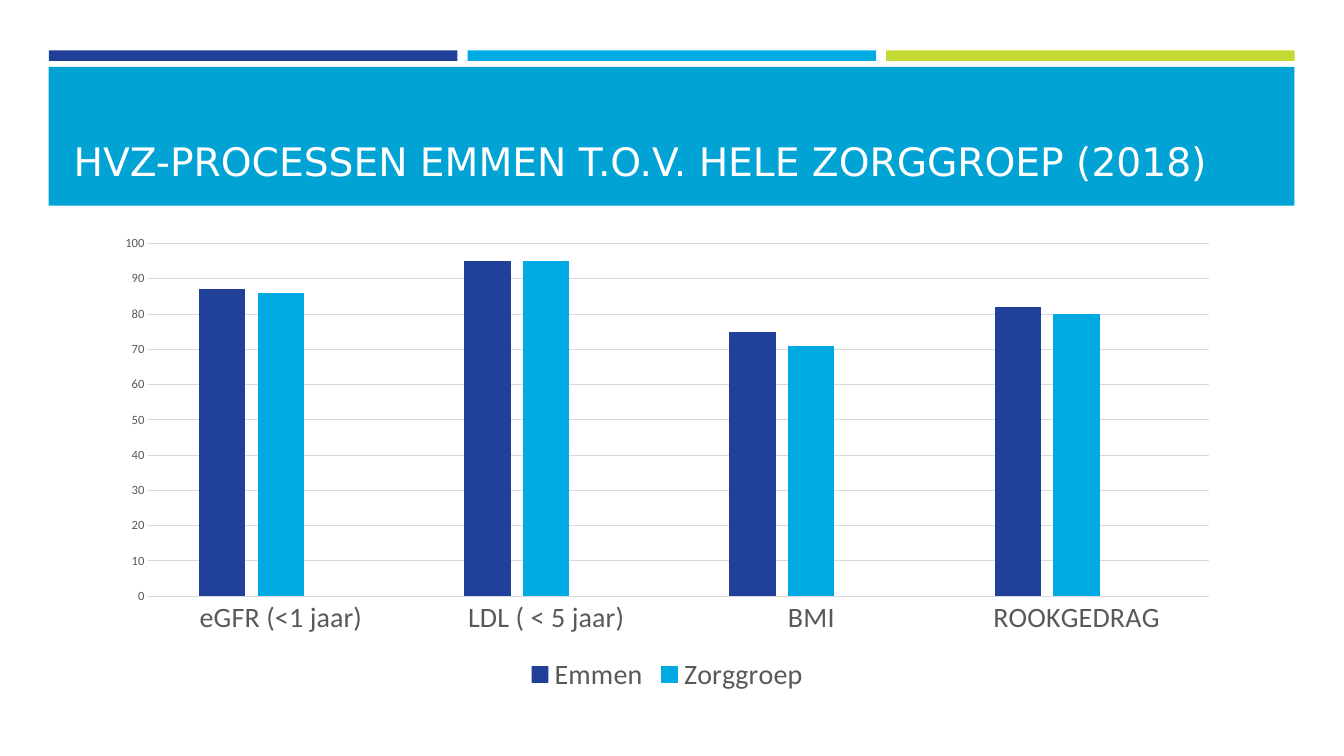
from pptx import Presentation
from pptx.chart.data import CategoryChartData
from pptx.dml.color import RGBColor
from pptx.enum import chart as ch, shapes, text
from pptx.oxml import parse_xml
from pptx.oxml.ns import nsdecls
from pptx.util import Pt

# Content
TITLE = "HVZ-PROCESSEN EMMEN T.O.V. HELE ZORGGROEP (2018)"
CATEGORIES = ["eGFR (<1 jaar)", "LDL ( < 5 jaar)", "BMI", "ROOKGEDRAG"]
SERIES = [
    ("Emmen", [87, 95, 75, 82], "21409A"),
    ("Zorggroep", [86, 95, 71, 80], "00ABE3"),
    ("Series 3", [None] * 4, "00ABE3"),  # empty slot beside each pair
]
EMPTY_SERIES = 2
STRIPES = ["21409A", "00ABE3", "C4D934"]
BAND, WHITE, GREY, GRID = "00A3D4", "FFFFFF", "595959", "D9D9D9"

# Layout in points: left, top, width, height
STRIPE_LEFT, STRIPE_TOP, STRIPE_W, STRIPE_H, STRIPE_GAP = 35, 36, 291.8, 7.5, 7.2
BAND_BOX = (34.8, 47.8, 889.8, 99.2)
TITLE_BOX = (45.4, 57.6, 868.3, 77.8)
CHART_BOX = (73.4, 162, 806.4, 336.2)


def rgb(value):
    return RGBColor.from_string(value)


def paint(fill, color):
    fill.solid()
    fill.fore_color.rgb = rgb(color)


def set_font(font, color, **values):
    for name, value in values.items():
        setattr(font, name, value)
    font.color.rgb = rgb(color)


def rule(line):
    line.color.rgb = rgb(GRID)
    line.width = Pt(0.75)


def add_bar(slide, box, color):
    sp = slide.shapes.add_shape(shapes.MSO_SHAPE.RECTANGLE, *map(Pt, box))
    sp.shadow.inherit = False
    paint(sp.fill, color)
    sp.line.fill.background()


def add_title(slide):
    sp = slide.shapes.title
    for name, value in zip(("left", "top", "width", "height"), TITLE_BOX):
        setattr(sp, name, Pt(value))
    paint(sp.fill, BAND)
    tf = sp.text_frame
    tf.text = TITLE
    frame = {"word_wrap": True, "auto_size": text.MSO_AUTO_SIZE.NONE,
             "vertical_anchor": text.MSO_ANCHOR.BOTTOM}
    for name, value in frame.items():
        setattr(tf, name, value)
    p = tf.paragraphs[0]
    p.alignment = text.PP_ALIGN.LEFT
    set_font(p.runs[0].font, WHITE, name="DejaVu Sans", size=Pt(28))
    slide.shapes._spTree.append(sp._element)  # bring in front of the band


def add_columns(slide):
    data = CategoryChartData()
    data.categories = CATEGORIES
    for name, values, _ in SERIES:
        data.add_series(name, values)
    chart = slide.shapes.add_chart(
        ch.XL_CHART_TYPE.COLUMN_CLUSTERED, *map(Pt, CHART_BOX), data).chart
    chart.has_title = False
    set_font(chart.font, "000000", name="Calibri", size=Pt(10))

    # Columns
    plot = chart.plots[0]
    for name, value in {"gap_width": 219, "overlap": -27, "vary_by_categories": False}.items():
        setattr(plot, name, value)
    for series, (_, _, color) in zip(plot.series, SERIES):
        paint(series.format.fill, color)

    # Axes
    for axis, size in ((chart.category_axis, 20), (chart.value_axis, 9)):
        axis.major_tick_mark = axis.minor_tick_mark = ch.XL_TICK_MARK.NONE
        set_font(axis.tick_labels.font, GREY, name="Calibri", size=Pt(size))
    rule(chart.category_axis.format.line)
    scale = chart.value_axis
    for name, value in {"minimum_scale": 0, "maximum_scale": 100, "major_unit": 10,
                        "has_major_gridlines": True}.items():
        setattr(scale, name, value)
    scale.format.line.fill.background()
    rule(scale.major_gridlines.format.line)

    # Legend without the empty series
    chart.has_legend = True
    legend = chart.legend
    legend.position = ch.XL_LEGEND_POSITION.BOTTOM
    legend.include_in_layout = False
    set_font(legend.font, GREY, name="Calibri", size=Pt(20))
    legend._element.insert(1, parse_xml(
        f'<c:legendEntry {nsdecls("c")}><c:idx val="{EMPTY_SERIES}"/>'
        '<c:delete val="1"/></c:legendEntry>'))


def main():
    prs = Presentation()
    prs.slide_width, prs.slide_height = Pt(960), Pt(540)
    slide = prs.slides.add_slide(prs.slide_layouts[5])

    # Header stripes and title band
    for i, color in enumerate(STRIPES):
        left = STRIPE_LEFT + i * (STRIPE_W + STRIPE_GAP)
        add_bar(slide, (left, STRIPE_TOP, STRIPE_W, STRIPE_H), color)
    add_bar(slide, BAND_BOX, BAND)
    add_title(slide)
    add_columns(slide)
    prs.save("out.pptx")


if __name__ == "__main__":
    main()
